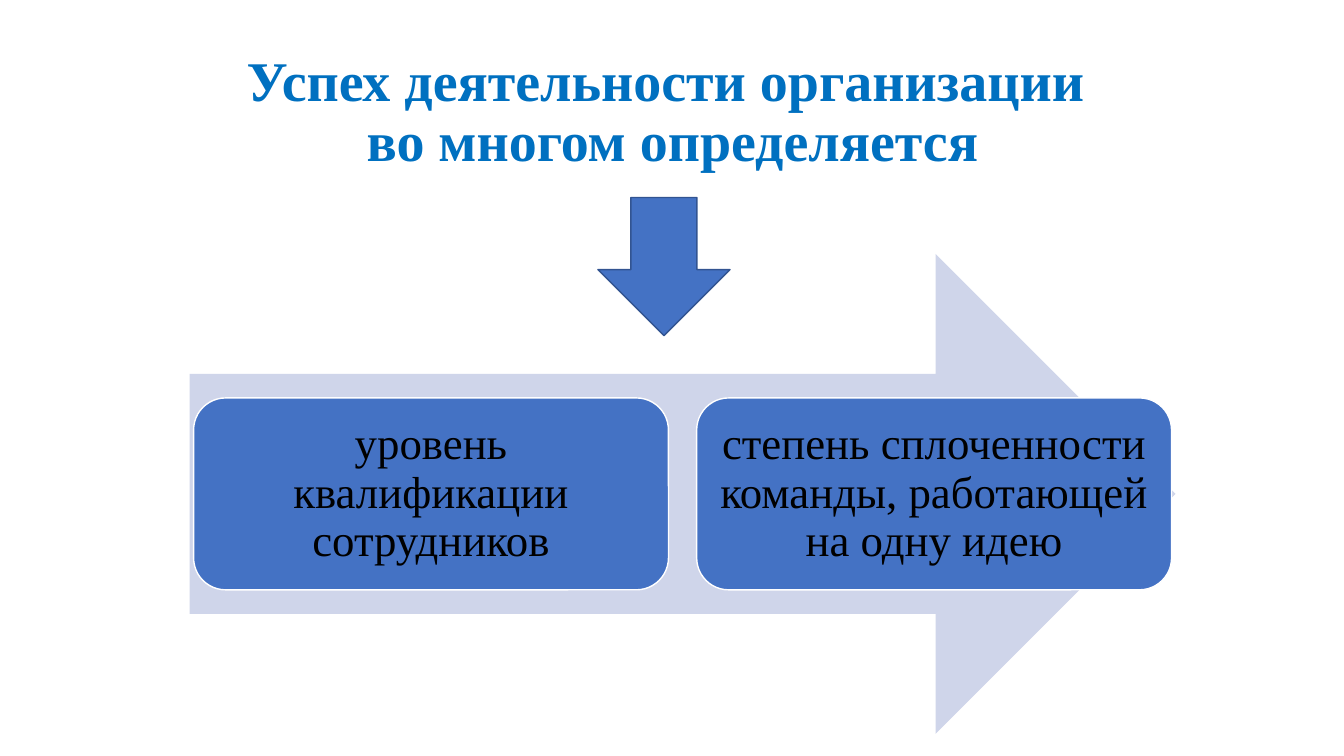
from dataclasses import dataclass

from pptx import Presentation
from pptx import util as u
from pptx.dml.color import RGBColor
from pptx.enum import shapes, text


@dataclass(frozen=True)
class Theme:
    font: str = "Times New Roman"
    title: str = "0070C0"
    body: str = "000000"
    accent: str = "4472C4"
    outline: str = "325491"
    pale: str = "CFD5EA"
    white: str = "FFFFFF"
    title_size: int = 40
    body_size: int = 32


THEME = Theme()


def inches(*lengths):
    return [u.Inches(n) for n in lengths]


def write(sp, lines, size, color, bold=False, inset=0.1):
    tf = sp.text_frame
    frame = {"word_wrap": True, "vertical_anchor": text.MSO_ANCHOR.MIDDLE}
    for side in ("left", "right", "top", "bottom"):
        frame[f"margin_{side}"] = u.Inches(inset)
    for name, value in frame.items():
        setattr(tf, name, value)
    p = tf.paragraphs[0]
    p.alignment = text.PP_ALIGN.CENTER
    p.line_spacing = 0.9
    for i, line in enumerate(lines):
        if i:
            p.add_line_break()
        r = p.add_run()
        r.text = line
        style = {"name": THEME.font, "size": u.Pt(size), "bold": bold}
        for name, value in style.items():
            setattr(r.font, name, value)
        r.font.color.rgb = RGBColor.from_string(color)


def add_block(s, kind, box, fill, line=None):
    sp = s.shapes.add_shape(kind, *inches(*box))
    sp.shadow.inherit = False
    sp.fill.solid()
    sp.fill.fore_color.rgb = RGBColor.from_string(fill)
    if line:
        sp.line.color.rgb = RGBColor.from_string(line)
        sp.line.width = u.Pt(1)
    else:
        sp.line.fill.background()
    return sp


def add_title(s, box, lines):
    sp = s.shapes.add_textbox(*inches(*box))
    write(sp, lines, THEME.title_size, THEME.title, bold=True)


def add_process(s, box, steps):
    left, top, width, height = box
    add_block(s, shapes.MSO_SHAPE.RIGHT_ARROW, box, THEME.pale)
    margin, gap = 0.04, 0.28
    card_w = (width - 2 * margin - gap * (len(steps) - 1)) / len(steps)
    card_h = height * 0.4
    card_top = top + (height - card_h) / 2
    for i, step in enumerate(steps):
        card_left = left + margin + i * (card_w + gap)
        sp = add_block(s, shapes.MSO_SHAPE.ROUNDED_RECTANGLE,
                       (card_left, card_top, card_w, card_h),
                       THEME.accent, THEME.white)
        write(sp, [step], THEME.body_size, THEME.body)


def add_pointer(s, box):
    add_block(s, shapes.MSO_SHAPE.DOWN_ARROW, box, THEME.accent, THEME.outline)


def main():
    prs = Presentation()
    prs.slide_width, prs.slide_height = inches(13.33, 7.5)
    s = prs.slides.add_slide(prs.slide_layouts[6])
    add_title(s, (0.92, 0.4, 11.5, 1.45),
              ["Успех деятельности организации ", "во многом определяется"])
    add_process(s, (1.88, 2.52, 9.78, 4.76),
                ["уровень квалификации сотрудников",
                 "степень сплоченности команды, работающей на одну идею"])
    add_pointer(s, (5.93, 1.96, 1.31, 1.37))
    prs.save("out.pptx")


if __name__ == "__main__":
    main()
